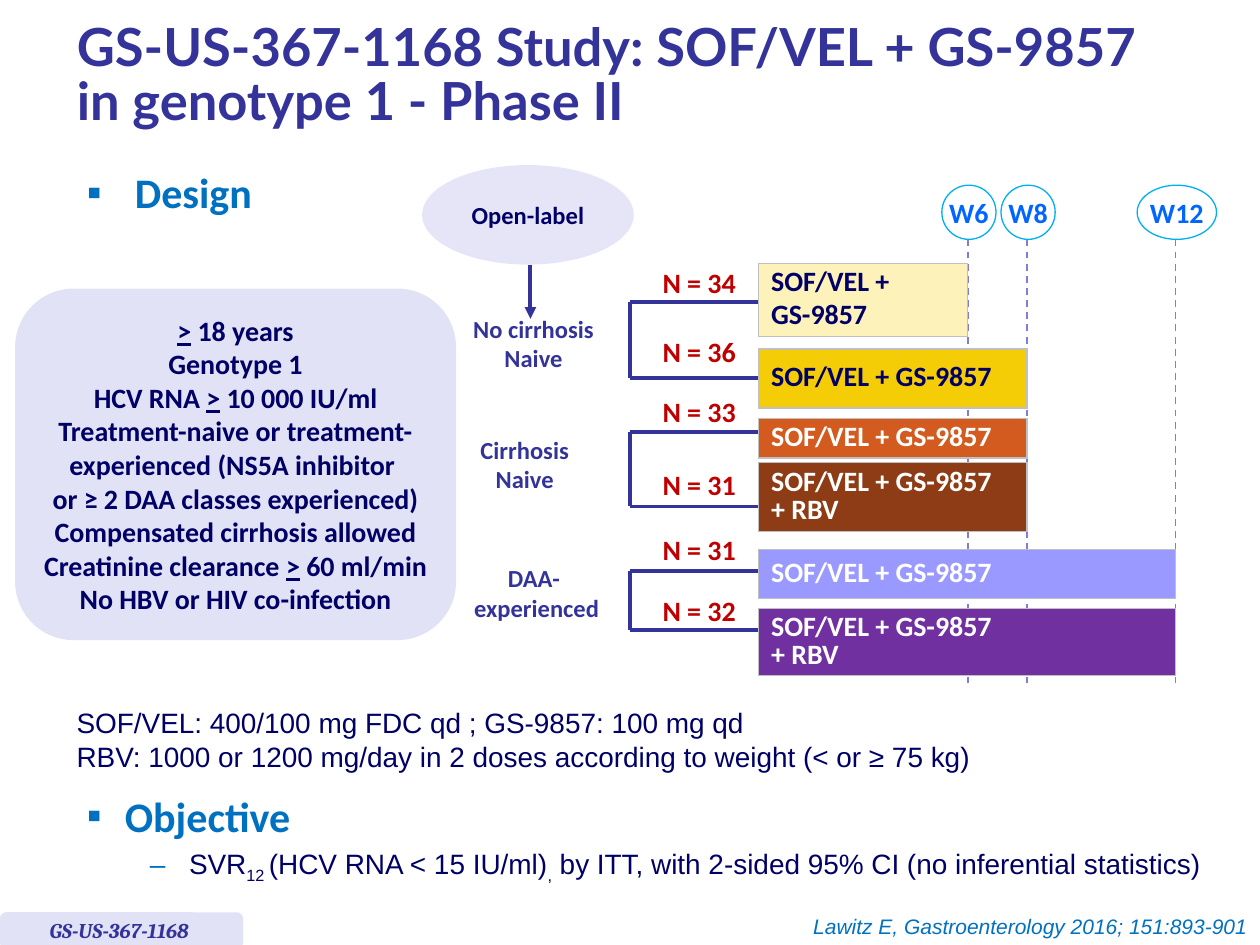
from lxml import etree
from pptx import Presentation
from pptx.dml.color import RGBColor
from pptx.enum.dml import MSO_LINE
from pptx.enum.shapes import MSO_CONNECTOR, MSO_SHAPE
from pptx.enum.text import MSO_ANCHOR, MSO_AUTO_SIZE, PP_ALIGN
from pptx.oxml.ns import qn
from pptx.util import Inches, Pt

COLORS = {
    "navy": "000066", "indigo": "333399", "blue": "0070C0", "week": "0066FF",
    "ring": "00B0F0", "dash": "7E7ED4", "red": "C00000", "white": "FFFFFF",
    "lavender": "E2E2F6", "pale": "E5E5F7", "border": "C0C0C0",
    "cream": "FDF2BA", "gold": "F5CD06", "orange": "D35B1F",
    "brown": "8D3C15", "violet": "9999FF", "purple": "7030A0",
}
LEFT, CENTER, RIGHT = PP_ALIGN.LEFT, PP_ALIGN.CENTER, PP_ALIGN.RIGHT
BRACKET_LEFT, BAR_LEFT = 5, 6.02
WEEKS = {"W12": (9.33, 0.63), "W8": (8.15, 0.43), "W6": (7.68, 0.43)}


def rgb(name):
    return RGBColor.from_string(COLORS[name])


class StudySlide:
    def __init__(self, slide):
        self.slide = slide
        self.shapes = slide.shapes

    def style(self, size, color, font="Calibri", bold=True, italic=False):
        return dict(size=Pt(size), color=color, name=font, bold=bold, italic=italic)

    def add_runs(self, paragraph, runs, style):
        for text, mark in runs:
            for index, line in enumerate(text.split("\n")):
                if index:
                    paragraph.add_line_break()
                if not line:
                    continue
                run = paragraph.add_run()
                run.text = line
                font = run.font
                font.name, font.size = style["name"], style["size"]
                font.bold, font.italic = style["bold"], style["italic"]
                font.color.rgb = rgb(style["color"])
                if mark == "under":
                    font.underline = True
                elif mark == "sub":
                    run._r.get_or_add_rPr().set("baseline", "-25000")

    def add_paragraphs(self, frame, paragraphs, style, align=LEFT, spacing=None, before=0):
        for index, runs in enumerate(paragraphs):
            paragraph = frame.add_paragraph() if index else frame.paragraphs[0]
            paragraph.alignment = align
            paragraph.line_spacing = spacing
            paragraph.space_before = Pt(before if index else 0)
            if isinstance(runs, str):
                runs = [(runs, None)]
            self.add_runs(paragraph, runs, style)

    def place(self, shape, left, top, width, height):
        shape.left, shape.top = Inches(left), Inches(top)
        shape.width, shape.height = Inches(width), Inches(height)
        shape.text_frame.auto_size = MSO_AUTO_SIZE.NONE

    def title(self, box, text, style):
        heading = self.shapes.title
        self.place(heading, *box)
        heading.text_frame.vertical_anchor = MSO_ANCHOR.MIDDLE
        self.add_paragraphs(heading.text_frame, [text], style, spacing=0.85)

    def bullet_list(self, index, box, items):
        body = self.slide.placeholders[index]
        self.place(body, *box)
        frame = body.text_frame
        for number, (level, char, indent, hanging, runs, style) in enumerate(items):
            paragraph = frame.add_paragraph() if number else frame.paragraphs[0]
            paragraph.level = level
            props = paragraph._p.get_or_add_pPr()
            props.set("marL", str(Inches(indent)))
            props.set("indent", str(-Inches(hanging)))
            color = etree.SubElement(props, qn("a:buClr"))
            etree.SubElement(color, qn("a:srgbClr"), val=COLORS["blue"])
            etree.SubElement(props, qn("a:buFont"), typeface="Arial")
            etree.SubElement(props, qn("a:buChar"), char=char)
            paragraph.space_before = Pt(3.2 if number else 0)
            self.add_runs(paragraph, runs, style)

    def label(self, box, paragraphs, style, align=LEFT, wrap=False):
        frame = self.shapes.add_textbox(*map(Inches, box)).text_frame
        frame.word_wrap = wrap
        self.add_paragraphs(frame, paragraphs, style, align)

    def shape(self, kind, box, fill, paragraphs, style, outline=None, wrap=False):
        shape = self.shapes.add_shape(kind, *map(Inches, box))
        shape.shadow.inherit = False
        shape.fill.solid()
        shape.fill.fore_color.rgb = rgb(fill)
        if outline:
            shape.line.color.rgb = rgb(outline)
            shape.line.width = Pt(0.75)
        else:
            shape.line.fill.background()
        frame = shape.text_frame
        frame.word_wrap = wrap
        frame.vertical_anchor = MSO_ANCHOR.MIDDLE
        if wrap:
            frame.margin_left = frame.margin_right = Inches(0.04)
        self.add_paragraphs(frame, paragraphs, style, CENTER)

    def line(self, start, end, color="indigo", width=2.25, dash=False, arrow=False, parent=None):
        line = (parent or self).shapes.add_connector(
            MSO_CONNECTOR.STRAIGHT, *map(Inches, (*start, *end)))
        line.line.color.rgb = rgb(color)
        line.line.width = Pt(width)
        if dash:
            line.line.dash_style = MSO_LINE.DASH
        if arrow:
            etree.SubElement(line.line._get_or_add_ln(), qn("a:tailEnd"), type="triangle")
        etree.SubElement(line._element.spPr, qn("a:effectLst"))

    def bracket(self, top, bottom):
        group = self.shapes.add_group_shape()
        for y in (top, bottom):
            self.line((BRACKET_LEFT, y), (BAR_LEFT, y), parent=group)
        self.line((BRACKET_LEFT, top), (BRACKET_LEFT, bottom), parent=group)

    def bar(self, top, height, week, fill, paragraphs, style):
        width = WEEKS[week][0] - BAR_LEFT
        table = self.shapes.add_table(
            1, 1, *map(Inches, (BAR_LEFT, top, width, height))).table
        table.first_row = table.horz_banding = False
        cell = table.cell(0, 0)
        cell.vertical_anchor = MSO_ANCHOR.MIDDLE
        cell.fill.solid()
        cell.fill.fore_color.rgb = rgb(fill)
        for index, side in enumerate(("lnL", "lnR", "lnT", "lnB")):
            border = etree.Element(qn("a:" + side), w=str(Pt(1)))
            solid = etree.SubElement(border, qn("a:solidFill"))
            etree.SubElement(solid, qn("a:srgbClr"), val=COLORS["border"])
            cell._tc.get_or_add_tcPr().insert(index, border)
        self.add_paragraphs(cell.text_frame, paragraphs, style, spacing=0.8, before=3.2)


def main():
    deck = Presentation()
    deck.slide_width, deck.slide_height = Inches(10), Inches(7.5)
    study = StudySlide(deck.slides.add_slide(deck.slide_layouts[3]))
    heading = study.style(24, "blue")
    small = study.style(14, "indigo")
    strong = study.style(16, "navy")
    plain = study.style(16, "navy", "Arial", False)

    study.title((0.51, 0.08, 9.13, 1.07),
                "GS-US-367-1168 Study: SOF/VEL + GS-9857 \nin genotype 1 - Phase II",
                study.style(30, "indigo", "Lato"))
    study.bullet_list(1, (0.59, 1.27, 1.98, 0.63),
                      [(0, "▪", 0.38, 0.38, [("Design", None)], heading)])
    outcome = [("SVR", None), ("12 ", "sub"), ("(HCV RNA < 15 IU/ml)", None), (",", "sub"),
               (" by ITT, with 2-sided 95% CI (no inferential statistics)", None)]
    study.bullet_list(2, (0.59, 6.22, 9.13, 0.91),
                      [(0, "▪", 0.3, 0.3, [("Objective", None)], heading),
                       (1, "–", 0.81, 0.31, outcome, plain)])

    for week, (x, width) in WEEKS.items():
        study.line((x, 1.9), (x, 5.42), "dash", 1, dash=True)
        study.shape(MSO_SHAPE.OVAL, (x + 0.01 - width / 2, 1.47, width, 0.43), "white",
                    [week], study.style(16, "week"), outline="ring")

    criteria = [
        [(">", "under"), (" 18 years\nGenotype 1", None)],
        [("HCV RNA ", None), (">", "under"), (" 10 000 IU/ml", None)],
        "Treatment-naive or treatment-experienced (NS5A inhibitor \nor ≥ 2 DAA classes experienced)",
        "Compensated cirrhosis allowed",
        [("Creatinine clearance ", None), (">", "under"), (" 60 ml/min", None)],
        "No HBV or HIV co-infection",
    ]
    study.shape(MSO_SHAPE.ROUNDED_RECTANGLE, (0.12, 2.29, 3.5, 2.79), "lavender",
                criteria, strong, wrap=True)
    study.shape(MSO_SHAPE.OVAL, (3.35, 1.31, 1.68, 0.79), "pale",
                ["Open-label"], study.style(14, "navy"))
    study.line((4.21, 2.1), (4.21, 2.53), arrow=True)

    populations = [
        ((3.65, 2.44, 1.17, 0.57), ["No cirrhosis", "Naive"], (2.4, 3)),
        ((3.71, 3.4, 0.91, 0.57), ["Cirrhosis", "Naive"], (3.43, 4.02)),
        ((3.66, 4.42, 1.2, 0.57), ["DAA- ", "experienced"], (4.53, 5)),
    ]
    for box, names, ends in populations:
        study.label(box, names, small, CENTER)
        study.bracket(*ends)

    regimen, with_rbv = ["SOF/VEL + GS-9857"], ["SOF/VEL + GS-9857 \n+ RBV"]
    arms = [
        (34, 2.06, 2.09, 0.58, "W6", "cream", "navy", ["SOF/VEL +", "GS-9857"]),
        (36, 2.61, 2.77, 0.47, "W8", "gold", "navy", regimen),
        (33, 3.08, 3.32, 0.31, "W8", "orange", "white", regimen),
        (31, 3.66, 3.67, 0.55, "W8", "brown", "white", with_rbv),
        (31, 4.18, 4.36, 0.39, "W12", "violet", "white", regimen),
        (32, 4.66, 4.83, 0.53, "W12", "purple", "white", with_rbv),
    ]
    for patients, count_top, top, height, week, fill, color, treatment in arms:
        study.bar(top, height, week, fill, treatment, study.style(16, color))
        study.label((5.16, count_top, 0.79, 0.37), [f"N = {patients}"], study.style(16, "red"))

    study.label((0.51, 5.55, 7.4, 0.64),
                ["SOF/VEL: 400/100 mg FDC qd ; GS-9857: 100 mg qd",
                 "RBV: 1000 or 1200 mg/day in 2 doses according to weight (< or ≥ 75 kg)"],
                plain, wrap=True)
    study.shape(MSO_SHAPE.ROUNDED_RECTANGLE, (0, 7.24, 1.93, 0.29), "lavender",
                ["GS-US-367-1168 "], study.style(12, "indigo", "Cambria", italic=True))
    study.label((6.33, 7.2, 3.67, 0.3), ["Lawitz E, Gastroenterology 2016; 151:893-901"],
                study.style(12, "blue", "Arial", False, True), RIGHT)
    deck.save("out.pptx")


if __name__ == "__main__":
    main()
